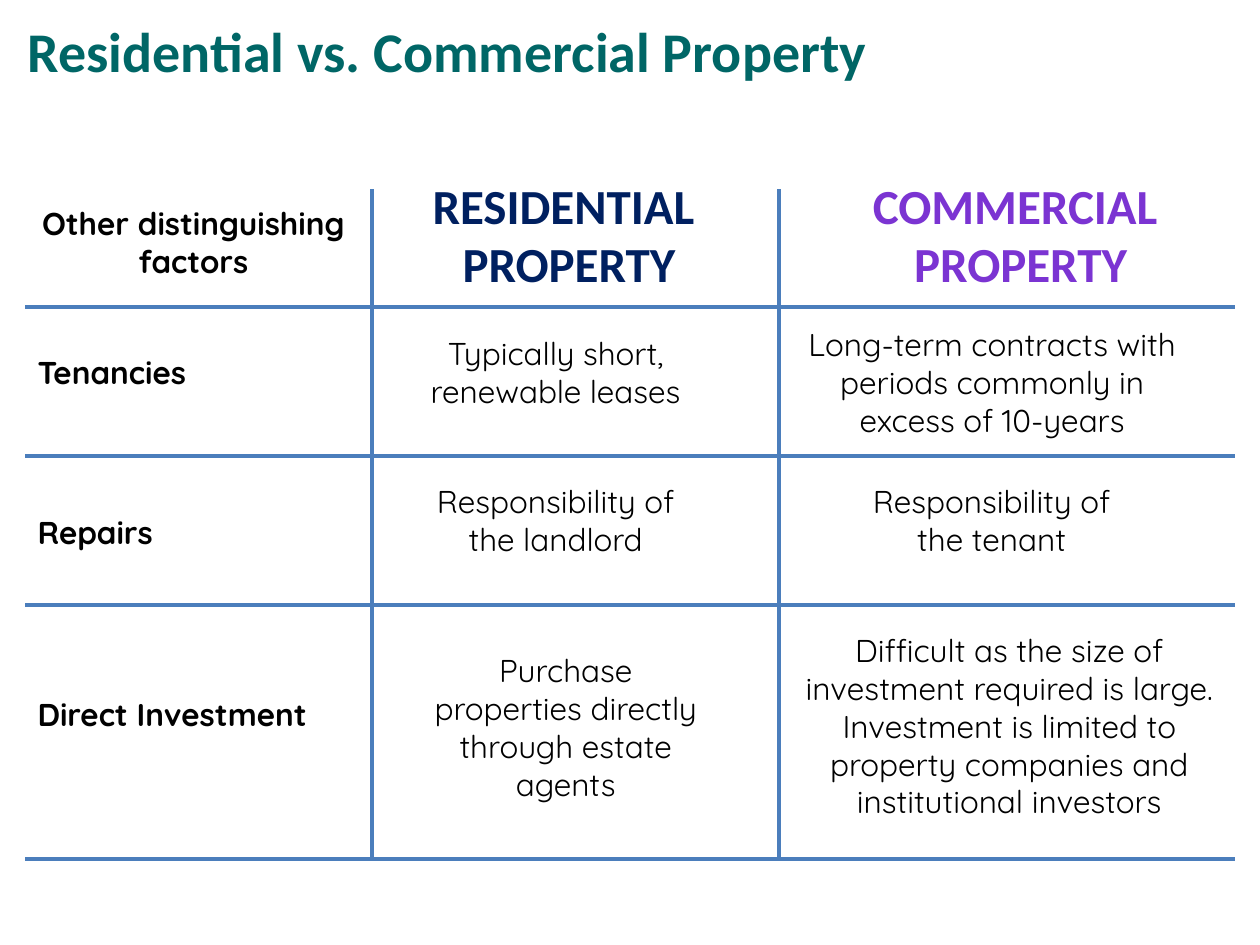
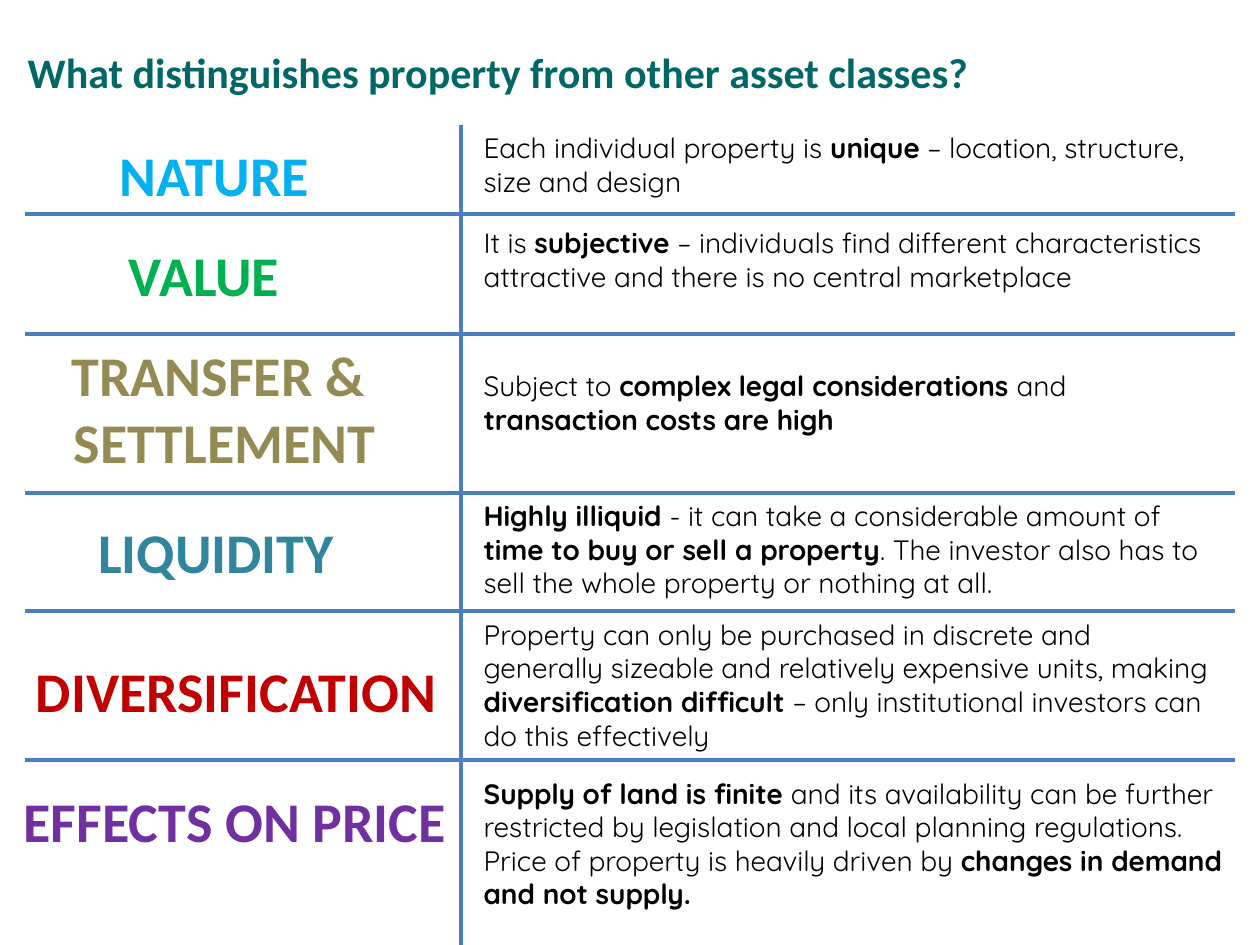
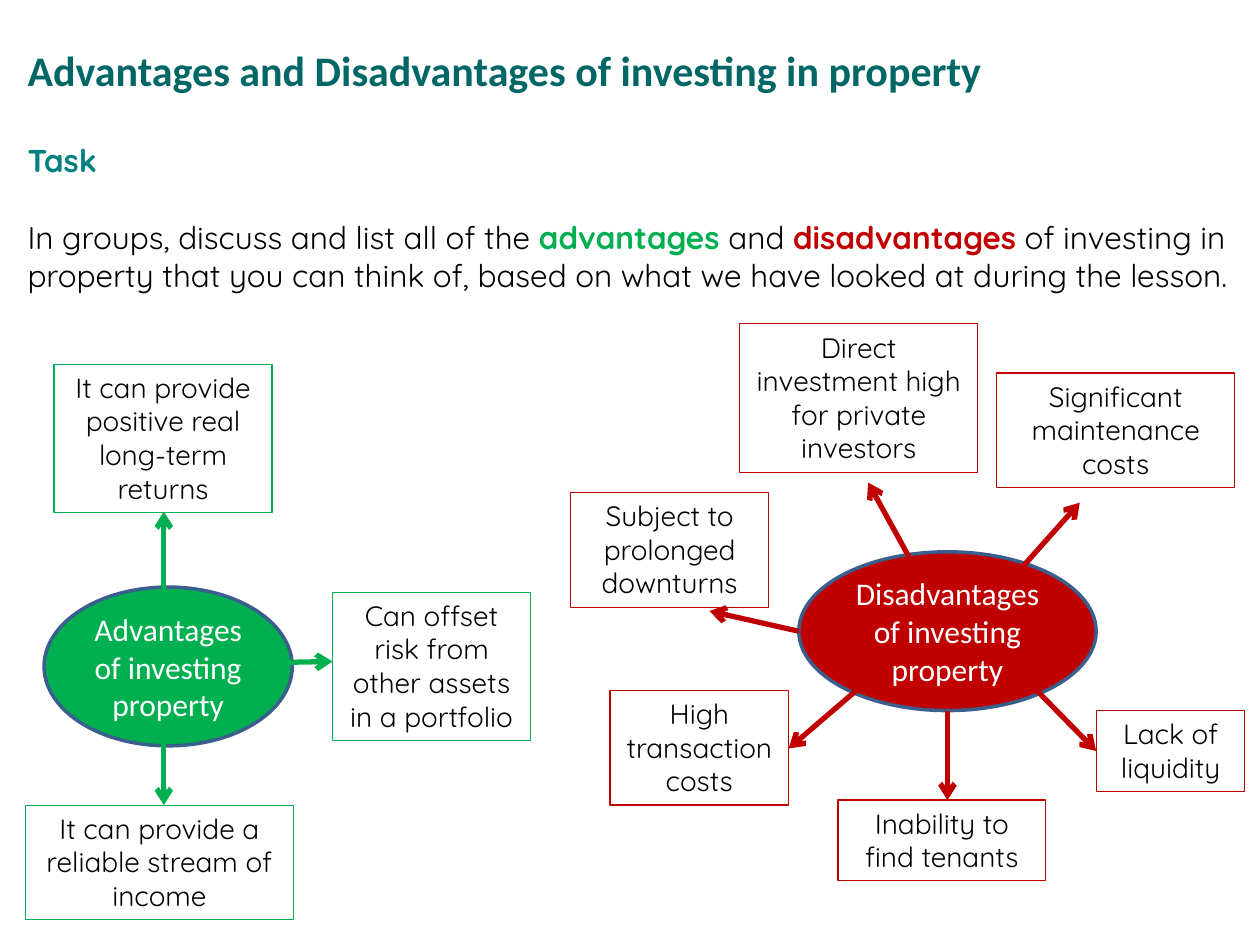
from lxml import etree
from pptx import Presentation
from pptx.dml.color import RGBColor
from pptx.enum.shapes import MSO_CONNECTOR, MSO_SHAPE
from pptx.enum.text import MSO_ANCHOR, MSO_AUTO_SIZE, PP_ALIGN
from pptx.oxml.ns import qn
from pptx.util import Inches, Pt

COLORS = {
    "title": "006666",
    "task": "008080",
    "text": "000000",
    "white": "FFFFFF",
    "grid": "4B7EBC",
    "oval_edge": "3A5F8C",
    "advantage": "00B050",
    "disadvantage": "C00000",
    "residential": "002060",
    "commercial": "7B34D2",
    "nature": "00B0F0",
    "value": "00B050",
    "transfer": "948A54",
    "liquidity": "31859C",
    "diversification": "C00000",
    "price": "7030A0",
}
HEADING_FONT = "Calibri"
BODY_FONT = "Quicksand"
GRID_LEFT, GRID_RIGHT = 0.2, 9.8


def color(name):
    return RGBColor.from_string(COLORS[name])


def inches(values):
    return [Inches(value) for value in values]


class Deck:
    def __init__(self):
        self.presentation = Presentation()
        self.presentation.slide_width = Inches(10)
        self.presentation.slide_height = Inches(7.5)
        self.slide = None

    def add_slide(self, title, box, size=24):
        layout = self.presentation.slide_layouts.get_by_name("Title Only")
        self.slide = self.presentation.slides.add_slide(layout)
        shape = self.slide.shapes.title
        shape.left, shape.top, shape.width, shape.height = inches(box)
        shape.text_frame.auto_size = MSO_AUTO_SIZE.NONE
        self.set_text(shape, title, size, "title", HEADING_FONT, bold=True,
                      anchor=MSO_ANCHOR.MIDDLE)

    def set_text(self, shape, text, size, color_name="text", font=BODY_FONT, bold=False,
                 align=PP_ALIGN.LEFT, anchor=MSO_ANCHOR.TOP, wrap=True):
        """Fill a shape, one paragraph a line; **marked** parts become bold."""
        frame = shape.text_frame
        frame.word_wrap = wrap
        frame.vertical_anchor = anchor
        for index, line in enumerate(text.split("\n")):
            paragraph = frame.add_paragraph() if index else frame.paragraphs[0]
            paragraph.alignment = align
            paragraph.font.name = font
            paragraph.font.size = Pt(size)
            paragraph.font.bold = bold
            paragraph.font.color.rgb = color(color_name)
            for position, part in enumerate(line.split("**")):
                if part:
                    run = paragraph.add_run()
                    run.text = part
                    if position % 2:
                        run.font.bold = True

    def text(self, box, text, size, **style):
        shape = self.slide.shapes.add_textbox(*inches(box))
        self.set_text(shape, text, size, **style)
        return shape

    def heading(self, box, text, size, color_name):
        self.text(box, text, size, color_name=color_name, font=HEADING_FONT,
                  bold=True, align=PP_ALIGN.CENTER, wrap=False)

    def shape(self, kind, box, line_color, line_width, fill=None):
        shape = self.slide.shapes.add_shape(kind, *inches(box))
        shape.shadow.inherit = False
        if fill:
            shape.fill.solid()
            shape.fill.fore_color.rgb = color(fill)
        else:
            shape.fill.background()
        shape.line.color.rgb = color(line_color)
        shape.line.width = Pt(line_width)
        return shape

    def oval(self, box, text, fill):
        shape = self.shape(MSO_SHAPE.OVAL, box, "oval_edge", 2, fill)
        self.set_text(shape, text, 18, "white", HEADING_FONT, align=PP_ALIGN.CENTER,
                      anchor=MSO_ANCHOR.MIDDLE)

    def note(self, box, text, line_color):
        shape = self.shape(MSO_SHAPE.RECTANGLE, box, line_color, 0.75)
        self.set_text(shape, text, 16, align=PP_ALIGN.CENTER)

    def line(self, start, end, color_name="grid", width=2.25, arrow=False):
        connector = self.slide.shapes.add_connector(
            MSO_CONNECTOR.STRAIGHT, *inches((*start, *end)))
        connector.line.color.rgb = color(color_name)
        connector.line.width = Pt(width)
        properties = connector._element.spPr
        if arrow:
            outline = properties.find(qn("a:ln"))
            etree.SubElement(outline, qn("a:tailEnd"), type="arrow")
        etree.SubElement(properties, qn("a:effectLst"))

    def grid(self, rows, columns, top, bottom):
        for y in rows:
            self.line((GRID_LEFT, y), (GRID_RIGHT, y))
        for x in columns:
            self.line((x, top), (x, bottom))


def build_comparison(deck):
    deck.add_slide("Residential vs. Commercial Property", (0.12, 0.13, 7.48, 0.54), 32)
    deck.grid((2.44, 3.62, 4.8, 6.82), (2.95, 6.18), 1.5, 6.82)
    deck.heading((3.32, 1.34, 2.39, 1.04), "RESIDENTIAL \nPROPERTY", 28, "residential")
    deck.heading((6.81, 1.34, 2.58, 1.04), "COMMERCIAL \nPROPERTY", 28, "commercial")
    deck.text((0, 1.57, 3.07, 0.71), "Other distinguishing factors", 18,
              bold=True, align=PP_ALIGN.CENTER)

    for top, factor in ((2.75, "Tenancies"), (4.02, "Repairs"), (5.47, "Direct Investment")):
        deck.text((GRID_LEFT, top, 2.6, 0.4), factor, 18, bold=True)

    answers = (
        ((3.19, 2.6, 2.44, 0.71), "Typically short, renewable leases"),
        ((6.26, 2.53, 3.23, 1.01),
         "Long-term contracts with periods commonly in excess of 10-years"),
        ((3.19, 3.78, 2.44, 0.71), "Responsibility of the landlord"),
        ((6.65, 3.78, 2.44, 0.71), "Responsibility of the tenant"),
        ((3.27, 5.12, 2.44, 1.31), "Purchase properties directly through estate agents"),
        ((6.1, 4.96, 3.82, 1.61),
         "Difficult as the size of investment required is large. Investment is limited "
         "to property companies and institutional investors"),
    )
    for box, answer in answers:
        deck.text(box, answer, 18, align=PP_ALIGN.CENTER)


def build_distinctions(deck):
    deck.add_slide("What distinguishes property from other asset classes?",
                   (0.12, 0.3, 8.03, 0.54))
    deck.grid((1.7, 2.65, 3.91, 4.85, 6.03), (3.66,), 0.99, 7.5)
    features = (
        ("NATURE", "nature", (0.84, 1.07, 1.72, 0.64), (3.74, 0.99, 6.06, 0.64),
         "Each individual property is **unique** – location, structure, size and design"),
        ("VALUE", "value", (0.92, 1.86, 1.4, 0.64), (3.74, 1.74, 6.06, 0.91),
         "It is **subjective** – individuals find different characteristics attractive "
         "and there is no central marketplace"),
        ("TRANSFER & \nSETTLEMENT", "transfer", (0.46, 2.65, 2.65, 1.18),
         (3.74, 2.88, 6.06, 0.64),
         "Subject to **complex legal considerations **and **transaction costs are high**"),
        ("LIQUIDITY", "liquidity", (0.67, 4.06, 2.09, 0.64), (3.74, 3.91, 6.06, 0.91),
         "**Highly illiquid **- it can take a considerable amount of **time to buy or sell "
         "a property**. The investor also has to sell the whole property or nothing at all."),
        ("DIVERSIFICATION", "diversification", (0.17, 5.16, 3.41, 0.64),
         (3.74, 4.85, 5.99, 1.18),
         "Property can only be purchased in discrete and generally sizeable and relatively "
         "expensive units, making **diversification difficult **– only institutional "
         "investors can do this effectively"),
        ("EFFECTS ON PRICE", "price", (0.07, 6.19, 3.59, 0.64), (3.74, 6.11, 6.06, 1.18),
         "**Supply of land is finite **and its availability can be further restricted by "
         "legislation and local planning regulations. Price of property is heavily driven "
         "by **changes in demand and not supply.**"),
    )
    for label, color_name, label_box, detail_box, detail in features:
        deck.heading(label_box, label, 32, color_name)
        deck.text(detail_box, detail, 16)


def build_task(deck):
    deck.add_slide("Advantages and Disadvantages of investing in property",
                   (0.12, 0.28, 8.03, 0.54))
    task = deck.text(
        (0.12, 1.07, 9.88, 1.61),
        "**Task**\nIn groups, discuss and list all of the **advantages **and "
        "**disadvantages** of investing in property that you can think of, based on what "
        "we have looked at during the lesson.", 18)
    label, question = task.text_frame.paragraphs
    label.font.color.rgb = color("task")
    question.space_before = Pt(22.5)
    bold_runs = [run for run in question.runs if run.font.bold]
    for run, color_name in zip(bold_runs, ("advantage", "disadvantage")):
        run.font.color.rgb = color(color_name)

    deck.oval((0.35, 4.66, 1.97, 1.26), "Advantages of investing property", "advantage")
    deck.oval((6.34, 4.38, 2.36, 1.26), "Disadvantages of investing property",
              "disadvantage")
    points = {
        "advantage": (
            ("It can provide positive real long-term returns",
             (0.43, 2.89, 1.73, 1.18), (1.3, 4.85), (1.3, 4.06)),
            ("Can offset risk from other assets in a portfolio",
             (2.64, 4.7, 1.57, 1.18), (2.09, 5.26), (2.64, 5.25)),
            ("It can provide a reliable stream of income",
             (0.2, 6.39, 2.13, 0.91), (1.3, 5.76), (1.3, 6.39)),
        ),
        "disadvantage": (
            ("Subject to prolonged downturns",
             (4.53, 3.91, 1.57, 0.91), (6.34, 5.01), (5.63, 4.85)),
            ("Direct investment high for private investors",
             (5.87, 2.57, 1.89, 1.18), (7.28, 4.54), (6.89, 3.83)),
            ("Significant maintenance costs",
             (7.91, 2.96, 1.89, 0.91), (7.99, 4.64), (8.57, 3.99)),
            ("Lack of liquidity",
             (8.7, 5.64, 1.18, 0.64), (8.15, 5.4), (8.7, 5.96)),
            ("Inability to find tenants",
             (6.65, 6.35, 1.65, 0.64), (7.52, 5.64), (7.52, 6.35)),
            ("High transaction costs",
             (4.84, 5.48, 1.42, 0.91), (6.89, 5.4), (6.26, 5.94)),
        ),
    }
    for color_name, notes in points.items():
        for text, box, start, end in notes:
            deck.note(box, text, color_name)
            deck.line(start, end, color_name, 3, arrow=True)


def main():
    deck = Deck()
    build_comparison(deck)
    build_distinctions(deck)
    build_task(deck)
    deck.presentation.save("out.pptx")


if __name__ == "__main__":
    main()
